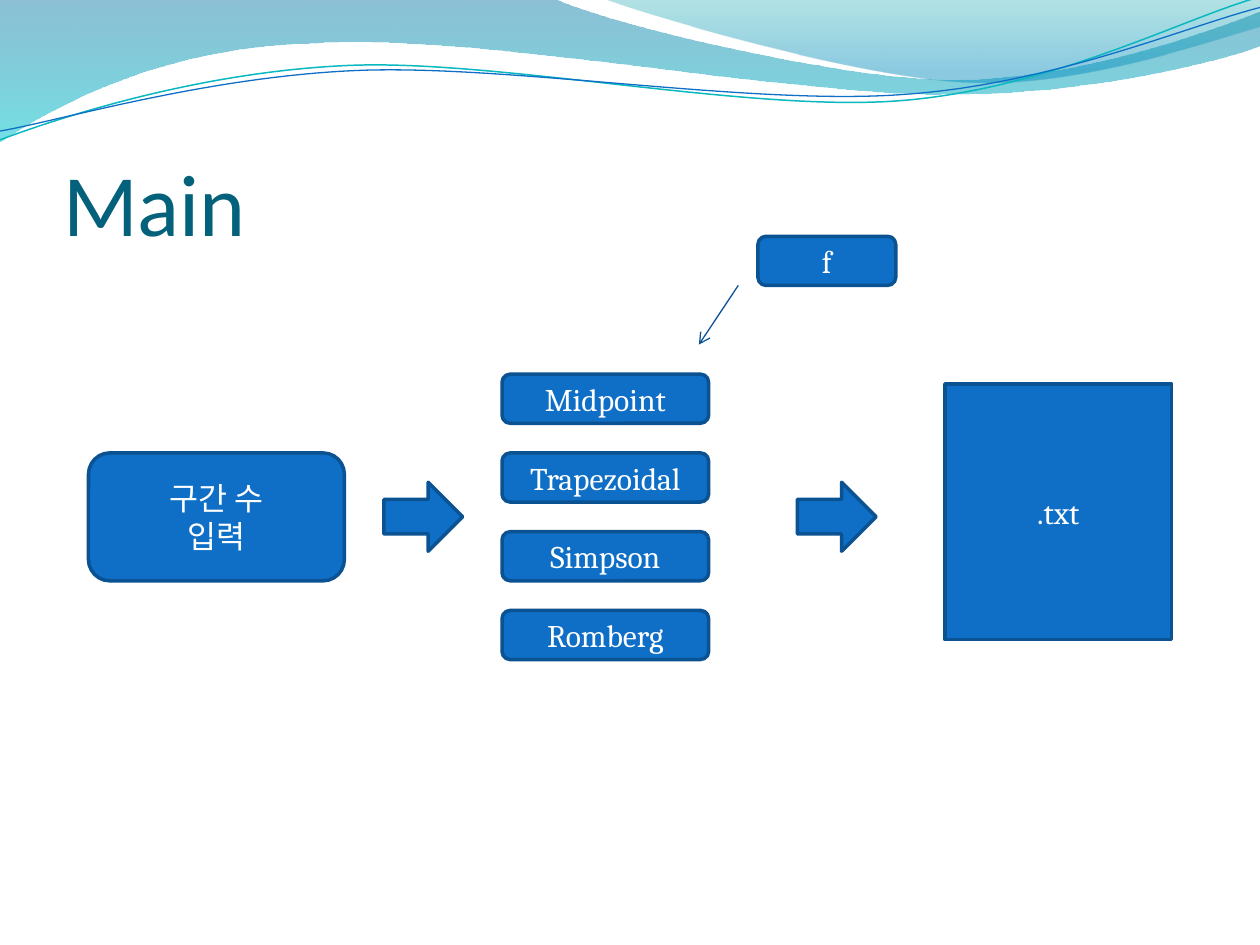
from math import cos, radians, sin

from lxml.etree import SubElement
from pptx import Presentation
from pptx.dml.color import RGBColor
from pptx.enum.shapes import MSO_CONNECTOR, MSO_SHAPE
from pptx.enum.text import MSO_ANCHOR, MSO_AUTO_SIZE, PP_ALIGN
from pptx.oxml.ns import qn
from pptx.util import Pt

# Content
TITLE = "Main"
INPUT = ["구간 수", "입력"]
METHODS = ["Midpoint", "Trapezoidal", "Simpson", "Romberg"]
FUNCTION = ["f"]
OUTPUT = [".txt"]

THEME = {
    "title": {"name": "Calibri", "size": Pt(50), "color": "04617B"},
    "label": {"name": "Cambria", "size": Pt(18), "color": "FFFFFF"},
    "fill": "0F6FC6", "edge": "0B5292", "link": "095295",
    "edge_width": 2, "link_width": 0.75,
}

# Header art in points: a pair is a straight step, six numbers are a curve
BANDS = [  # start, steps, gradient stops (position, colour, opacity %)
    ((0, 0),
     [(316.8, -0.7), (342.7, 12.2, 478.1, 45.4, 545.8, 45.4),
      (614.2, 45.4, 689.8, 18.7, 720, 6.5), (720.7, 25.9),
      (707.8, 31.7, 626.4, 54.7, 537.1, 54), (447.8, 54, 275, 20.2, 185, 24.5),
      (92.9, 25.9, 33.1, 59.8, -0.7, 81.4)],
     [(0, "0074A1", 45), (1, "00C6CF", 55)]),
    ((344.9, -0.7),
     [(366.5, 7.9, 491, 44.6, 553.7, 46.8),
      (616.3, 49.7, 691.9, 23, 720, 15.1), (720, 0)],
     [(0, "00A1A9", 30), (0.8, "008BBF", 45)]),
]
WAVES = [  # start, steps, centre, colour, width
    ((0, 79.9),
     [(34.6, 67, 113.8, 41, 199.4, 37.4), (284.4, 33.8, 427, 64.1, 513.4, 57.6),
      (599.8, 51.1, 675.4, 10.8, 718.6, -1.4)], (359.3, 41.4), "0AB8BF", 0.85),
    ((0, 74.9),
     [(33.8, 69.1, 118.1, 43.9, 203.8, 40.3), (290.2, 36.7, 429.8, 60.5, 516.2, 54),
      (601.9, 48.2, 677.5, 15.1, 720, 4.3)], (359.6, 42.5), "0F6FC6", 0.75),
]
WAVE_TILT = -2.7

# Layout in points
TITLE_BOX = (36, 55.4, 648, 90)
INPUT_BOX = (50.6, 258.8, 146.2, 73.1)
METHOD_BOX, METHOD_PITCH = (286.9, 213.8, 118.1, 28.1), 45
OUTPUT_BOX = (540, 219.4, 129.4, 146.2)
FUNCTION_BOX = (433.1, 135, 78.8, 28.1)
ARROW_LEFTS, ARROW_TOP, ARROW_SIZE = (219.4, 455.6), 275.6, (45, 39.4)
LINK = (421.9, 163.1, 399.4, 196.9)


def rgb(value):
    return RGBColor.from_string(value)


def pts(values):
    return [Pt(v) for v in values]


def style_run(r, fmt):
    for key, value in fmt.items():
        if key == "color":
            r.font.color.rgb = rgb(value)
        else:
            setattr(r.font, key, value)


def set_line(line, color, width):
    line.color.rgb = rgb(color)
    line.width = Pt(width)


def turn(point, centre, degrees):
    """Turn a point clockwise about a centre."""
    (x, y), (cx, cy), a = point, centre, radians(degrees)
    dx, dy = x - cx, y - cy
    return cx + dx * cos(a) - dy * sin(a), cy + dx * sin(a) + dy * cos(a)


def add_outline(shapes, start, steps, close, centre=(0, 0), tilt=0):
    points = [start] + [step[i:i + 2] for step in steps for i in range(0, len(step), 2)]
    first, *rest = [pts(turn(p, centre, -tilt)) for p in points]
    builder = shapes.build_freeform(*first)
    builder.add_line_segments(rest, close=close)
    sp = builder.convert_to_shape()
    sp.shadow.inherit = False
    sp.rotation = tilt
    # Join each curve's two handles and end point into one cubic step
    nodes = iter(list(sp._element.iter(qn("a:lnTo"))))
    for step in steps:
        parts = [next(nodes) for _ in range(len(step) // 2)]
        if len(parts) == 3:
            parts[0].addprevious(curve := SubElement(parts[0].getparent(), qn("a:cubicBezTo")))
            for part in parts:
                curve.append(part[0])
                part.getparent().remove(part)
    return sp


def add_band(shapes, start, steps, stops):
    sp = add_outline(shapes, start, steps, True)
    sp.line.fill.background()
    sp.fill.gradient()
    sp.fill.gradient_angle = 270
    for stop, (position, color, _) in zip(sp.fill.gradient_stops, stops):
        stop.position = position
        stop.color.rgb = rgb(color)
    colors = sp._element.spPr.iter(qn("a:srgbClr"))
    for clr, (_, _, opacity) in zip(colors, stops):
        SubElement(clr, qn("a:alpha"), val=str(opacity * 1000))


def add_wave(shapes, start, steps, centre, color, width):
    sp = add_outline(shapes, start, steps, False, centre, WAVE_TILT)
    sp.fill.background()
    set_line(sp.line, color, width)


def add_box(s, kind, box, lines=()):
    sp = s.shapes.add_shape(kind, *pts(box))
    sp.shadow.inherit = False
    sp.fill.solid()
    sp.fill.fore_color.rgb = rgb(THEME["fill"])
    set_line(sp.line, THEME["edge"], THEME["edge_width"])
    tf = sp.text_frame
    tf.word_wrap = True
    tf.vertical_anchor = MSO_ANCHOR.MIDDLE
    for i, text in enumerate(lines):
        p = tf.add_paragraph() if i else tf.paragraphs[0]
        p.alignment = PP_ALIGN.CENTER
        r = p.add_run()
        r.text = text
        style_run(r, THEME["label"])


def add_title(s):
    title = s.shapes.title
    title.left, title.top, title.width, title.height = pts(TITLE_BOX)
    tf = title.text_frame
    frame = {"margin_left": 0, "margin_top": Pt(3.6), "margin_right": 0,
             "margin_bottom": 0, "vertical_anchor": MSO_ANCHOR.BOTTOM,
             "auto_size": MSO_AUTO_SIZE.NONE, "word_wrap": True}
    for key, value in frame.items():
        setattr(tf, key, value)
    p = tf.paragraphs[0]
    p.alignment = PP_ALIGN.LEFT
    r = p.add_run()
    r.text = TITLE
    style_run(r, THEME["title"])
    # Bring the title in front of the header art
    s.shapes[-1]._element.addnext(title._element)


def add_link(s):
    link = s.shapes.add_connector(MSO_CONNECTOR.STRAIGHT, *pts(LINK))
    set_line(link.line, THEME["link"], THEME["link_width"])
    SubElement(link.line._get_or_add_ln(), qn("a:tailEnd"), type="arrow")
    SubElement(link._element.spPr, qn("a:effectLst"))


def main():
    prs = Presentation()
    prs.slide_width, prs.slide_height = Pt(720), Pt(540)
    s = prs.slides.add_slide(prs.slide_layouts[5])

    # Header and title
    for band in BANDS:
        add_band(s.shapes, *band)
    waves = s.shapes.add_group_shape()
    for wave in WAVES:
        add_wave(waves.shapes, *wave)
    add_title(s)

    # Flow from input through the methods to the output file
    rounded = MSO_SHAPE.ROUNDED_RECTANGLE
    add_box(s, rounded, INPUT_BOX, INPUT)
    left, top, width, height = METHOD_BOX
    for i, method in enumerate(METHODS):
        add_box(s, rounded, (left, top + i * METHOD_PITCH, width, height), [method])
    add_box(s, MSO_SHAPE.RECTANGLE, OUTPUT_BOX, OUTPUT)
    for arrow_left in ARROW_LEFTS:
        add_box(s, MSO_SHAPE.RIGHT_ARROW, (arrow_left, ARROW_TOP, *ARROW_SIZE))

    # Function feeding the methods
    add_box(s, rounded, FUNCTION_BOX, FUNCTION)
    add_link(s)
    prs.save("out.pptx")


if __name__ == "__main__":
    main()
